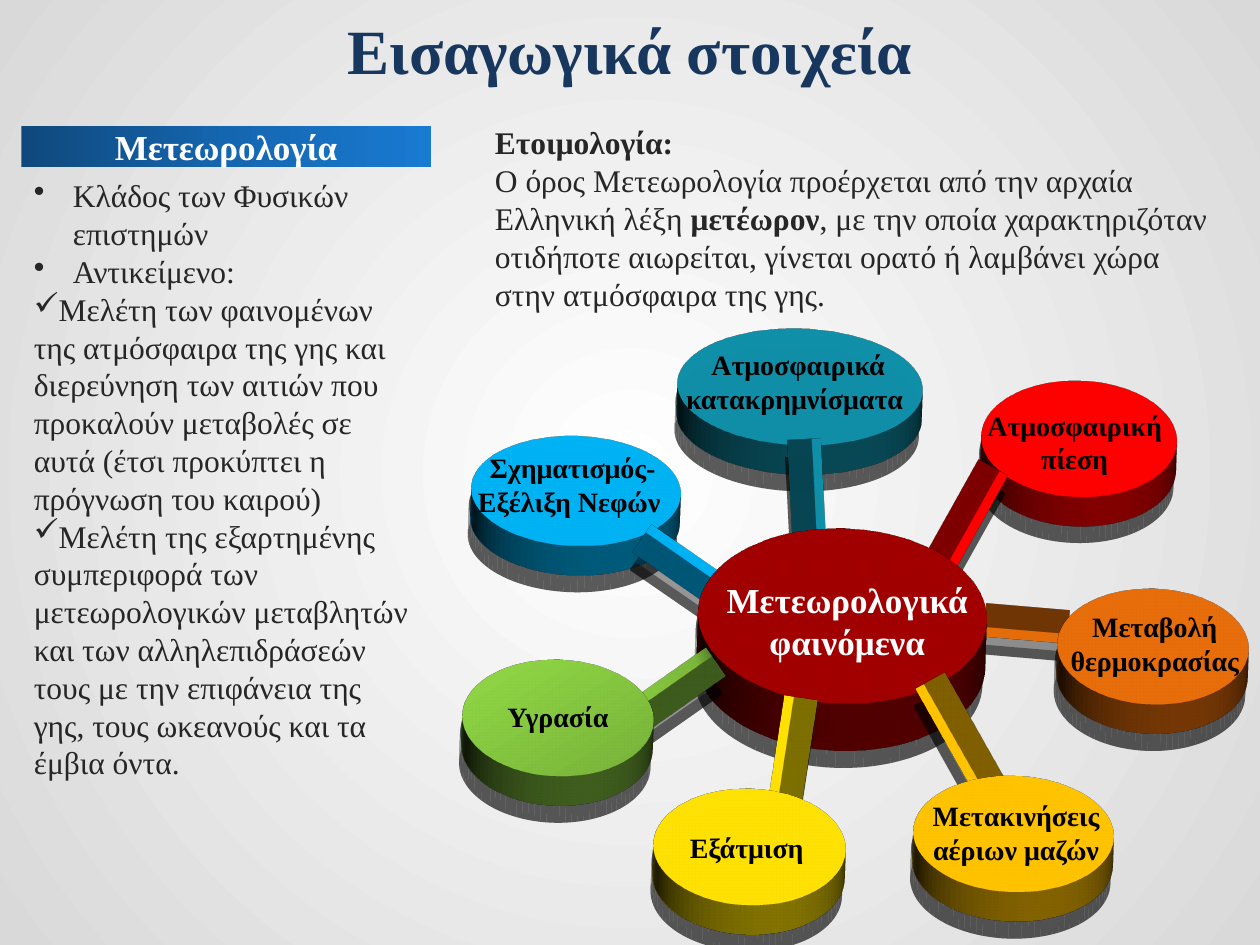
from lxml.etree import SubElement
from pptx import Presentation
from pptx.dml.color import RGBColor
from pptx.enum.shapes import MSO_SHAPE
from pptx.enum.text import MSO_ANCHOR, MSO_AUTO_SIZE, PP_ALIGN
from pptx.oxml import parse_xml
from pptx.oxml.ns import nsdecls, qn
from pptx.util import Inches, Pt

FONT = "Times New Roman"
DARK = "262626"
TITLE = "Εισαγωγικά στοιχεία"
HEADING = "Μετεωρολογία"
HEADING_STOPS = [(0, "0F487C"), (50, "1566B0"), (100, "197AD1")]
GREEN_STOPS = [(0, "57812A"), (12, "7BB73B"), (100, "92DA46")]
BACKGROUND_STOPS = [(0, "FFFFFF"), (100, "D9D9D9")]
CENTRE_PATH = '<a:path path="circle"><a:fillToRect l="50000" t="50000" r="50000" b="50000"/></a:path>'
BULLETS = [
    ("•", 0.31, "Κλάδος των Φυσικών επιστημών"),
    ("•", 0.31, "Αντικείμενο:"),
    ("✓", 0, "Μελέτη των φαινομένων της ατμόσφαιρα της γης και διερεύνηση των αιτιών που "
             "προκαλούν μεταβολές σε αυτά (έτσι προκύπτει η πρόγνωση του καιρού)"),
    ("✓", 0, "Μελέτη της εξαρτημένης συμπεριφορά των μετεωρολογικών μεταβλητών και των "
             "αλληλεπιδράσεών τους με την επιφάνεια της γης, τους ωκεανούς και τα έμβια όντα."),
]
ETYMOLOGY = [
    [("Ετοιμολογία:", True)],
    [("Ο όρος Μετεωρολογία προέρχεται από την αρχαία Ελληνική λέξη ", False),
     ("μετέωρον", True),
     (", με την οποία χαρακτηριζόταν οτιδήποτε αιωρείται, γίνεται ορατό ή λαμβάνει χώρα "
      "στην ατμόσφαιρα της γης.", False)],
]
DISC, SPOKE = MSO_SHAPE.OVAL, MSO_SHAPE.RECTANGLE
DEPTHS = {DISC: 0.33, SPOKE: 0.27}
HUB_COLOUR, HUB_DEPTH = "A00000", 0.53
SOLIDS = [
    (DISC, (3.74, 3.28, 1.66, 1.23), 2, "00B0F0"),
    (DISC, (5.38, 2.42, 1.94, 1.3), 2, "118EA7"),
    (DISC, (7.79, 2.83, 1.55, 1.3), 2, "FF0000"),
    (SPOKE, (5.09, 4.33, 0.66, 0.11), 34.6, "00B0F0"),
    (SPOKE, (6.03, 3.9, 0.94, 0.1), 87.1, "118EA7"),
    (SPOKE, (7.31, 4.09, 0.88, 0.11), 119.2, "FF0000"),
    (SPOKE, (7.81, 4.99, 0.66, 0.11), 184.9, "E46C0A"),
    (DISC, (5.54, 3.91, 2.29, 1.96), 2, HUB_COLOUR),
    (SPOKE, (6.98, 5.94, 1.26, 0.11), 240.7, "FFC000"),
    (SPOKE, (5.54, 6.09, 1.26, 0.11), 278.7, "FDDF03"),
    (SPOKE, (4.57, 5.45, 1.16, 0.12), 325, GREEN_STOPS),
    (DISC, (7.25, 5.97, 1.59, 1.3), 2, "FFC000"),
    (DISC, (5.19, 6.07, 1.52, 1.3), 2, "FDDF03"),
    (DISC, (3.67, 5.05, 1.52, 1.3), 2, GREEN_STOPS),
    (DISC, (8.39, 4.48, 1.52, 1.3), 2, "E46C0A"),
]
LABELS = [
    ("Μετεωρολογικά φαινόμενα", (5.36, 4.54, 2.73, 0.77), 20, "FFFFFF"),
    ("Μεταβολή θερμοκρασίας", (8.08, 4.79, 2.17, 0.64), 16, "000000"),
    ("Ατμοσφαιρική πίεση", (7.5, 3.19, 2.06, 0.64), 16, "000000"),
    ("Μετακινήσεις αέριων μαζών", (7.08, 6.29, 1.97, 0.64), 16, "000000"),
    ("Εξάτμιση ", (5.08, 6.54, 1.75, 0.37), 16, "000000"),
    ("Υγρασία ", (3.58, 5.5, 1.75, 0.37), 16, "000000"),
    ("Σχηματισμός-Εξέλιξη Νεφών ", (3.67, 3.53, 1.75, 0.64), 16, "000000"),
    ("Ατμοσφαιρικά κατακρημνίσματα ", (5.25, 2.71, 2.17, 0.64), 16, "000000"),
]


def lengths(box):
    """Turn a box in inches into lengths."""
    return [Inches(value) for value in box]


def colour(value):
    """Turn a hex string into a colour."""
    return RGBColor.from_string(value)


def gradient(stops, direction):
    """Build a gradient fill from percent stops and a direction element."""
    marks = "".join(f'<a:gs pos="{position * 1000}"><a:srgbClr val="{value}"/></a:gs>'
                    for position, value in stops)
    return f'<a:gradFill {nsdecls("a")} rotWithShape="1"><a:gsLst>{marks}</a:gsLst>{direction}</a:gradFill>'


def style(paragraph, size, value, bold=None, alignment=None):
    """Set the font and alignment of a paragraph."""
    font = paragraph.font
    font.name, font.size, font.bold = FONT, Pt(size), bold
    font.color.rgb = colour(value)
    paragraph.alignment = alignment


def add_filled(slide, kind, box, fill, angle=0):
    """Add a borderless shape with a solid or gradient fill."""
    shape = slide.shapes.add_shape(kind, *lengths(box))
    shape.shadow.inherit = False
    shape.line.fill.background()
    shape.fill.solid()
    if isinstance(fill, str):
        shape.fill.fore_color.rgb = colour(fill)
    else:
        properties = shape.element.spPr
        direction = f'<a:lin ang="{angle * 60000}" scaled="0"/>'
        properties.replace(properties.find(qn("a:solidFill")), parse_xml(gradient(fill, direction)))
    return shape


def add_solid(slide, kind, box, rotation, fill):
    """Add an extruded, tilted shape with a shadow."""
    shape = add_filled(slide, kind, box, fill, 225)
    shape.rotation = rotation
    depth = Inches(HUB_DEPTH if fill == HUB_COLOUR else DEPTHS[kind])
    properties = shape.element.spPr
    properties.find(qn("a:effectLst")).append(parse_xml(
        f'<a:outerShdw {nsdecls("a")} blurRad="{Pt(21)}" dist="{Pt(10)}" dir="{98 * 60000}" '
        'rotWithShape="0"><a:srgbClr val="000000"><a:alpha val="40000"/></a:srgbClr></a:outerShdw>'))
    properties.append(parse_xml(
        f'<a:scene3d {nsdecls("a")}><a:camera prst="orthographicFront">'
        f'<a:rot lat="{315 * 60000}" lon="0" rev="0"/></a:camera>'
        '<a:lightRig rig="threePt" dir="t"/></a:scene3d>'))
    properties.append(parse_xml(
        f'<a:sp3d {nsdecls("a")} extrusionH="{depth}" prstMaterial="matte"/>'))


def add_text_box(slide, box, inset=None):
    """Add a wrapping text box and return its text frame."""
    frame = slide.shapes.add_textbox(*lengths(box)).text_frame
    frame.word_wrap = True
    if inset is not None:
        frame.margin_left = frame.margin_right = Inches(inset)
        frame.margin_top = frame.margin_bottom = Inches(inset)
    return frame


def next_paragraph(frame, index):
    """Return the first paragraph or add another."""
    return frame.add_paragraph() if index else frame.paragraphs[0]


def main():
    """Build and save the slide."""
    presentation = Presentation()
    presentation.slide_width, presentation.slide_height = Inches(10), Inches(7.5)
    slide = presentation.slides.add_slide(presentation.slide_layouts[5])
    slide.element.cSld.insert(0, parse_xml(
        f'<p:bg {nsdecls("p", "a")}><p:bgPr>{gradient(BACKGROUND_STOPS, CENTRE_PATH)}'
        '<a:effectLst/></p:bgPr></p:bg>'))

    title = slide.shapes.title
    title.left, title.top, title.width, title.height = lengths((0.5, 0, 9, 0.78))
    title.text_frame.text = TITLE
    title.text_frame.vertical_anchor = MSO_ANCHOR.MIDDLE
    style(title.text_frame.paragraphs[0], 36, "17375E", True, PP_ALIGN.CENTER)

    heading = add_filled(slide, MSO_SHAPE.RECTANGLE, (0.17, 1, 3.25, 0.33), HEADING_STOPS)
    heading.text_frame.text = HEADING
    heading.text_frame.vertical_anchor = MSO_ANCHOR.MIDDLE
    style(heading.text_frame.paragraphs[0], 20, "FFFFFF", True, PP_ALIGN.CENTER)

    frame = add_text_box(slide, (0.17, 1.3, 3.25, 5.2), 0.1)
    for index, (bullet, indent, text) in enumerate(BULLETS):
        paragraph = next_paragraph(frame, index)
        paragraph.text = text
        properties = paragraph._p.get_or_add_pPr()
        properties.set("marL", str(Inches(indent)))
        properties.set("indent", str(-Inches(indent)))
        SubElement(properties, qn("a:buChar"), char=bullet)
        style(paragraph, 18, DARK)

    for solid in SOLIDS:
        add_solid(slide, *solid)

    for text, box, size, value in LABELS:
        frame = add_text_box(slide, box)
        frame.auto_size = MSO_AUTO_SIZE.SHAPE_TO_FIT_TEXT
        frame.paragraphs[0].text = text
        style(frame.paragraphs[0], size, value, True, PP_ALIGN.CENTER)

    frame = add_text_box(slide, (3.83, 0.88, 6, 1.58), 0.1)
    for index, runs in enumerate(ETYMOLOGY):
        paragraph = next_paragraph(frame, index)
        style(paragraph, 18, DARK)
        for text, bold in runs:
            run = paragraph.add_run()
            run.text, run.font.bold = text, bold

    presentation.save("out.pptx")


if __name__ == "__main__":
    main()
